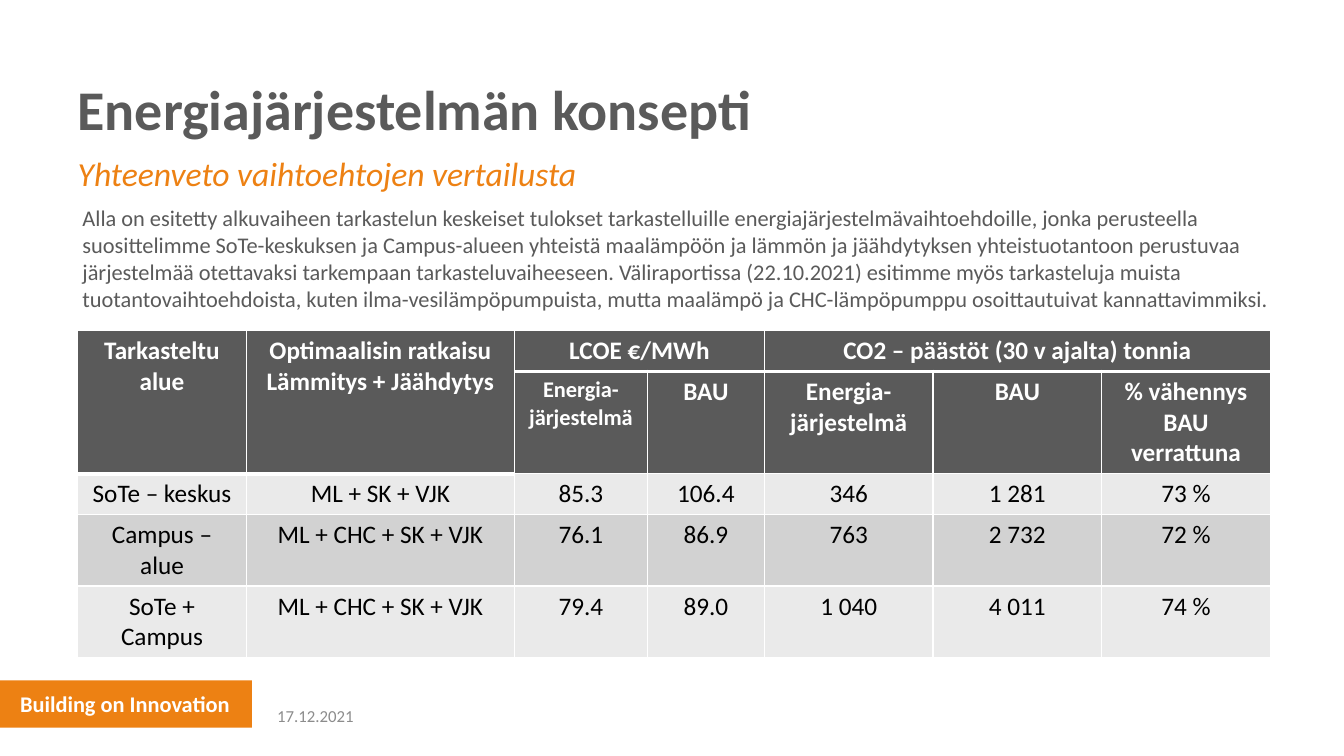
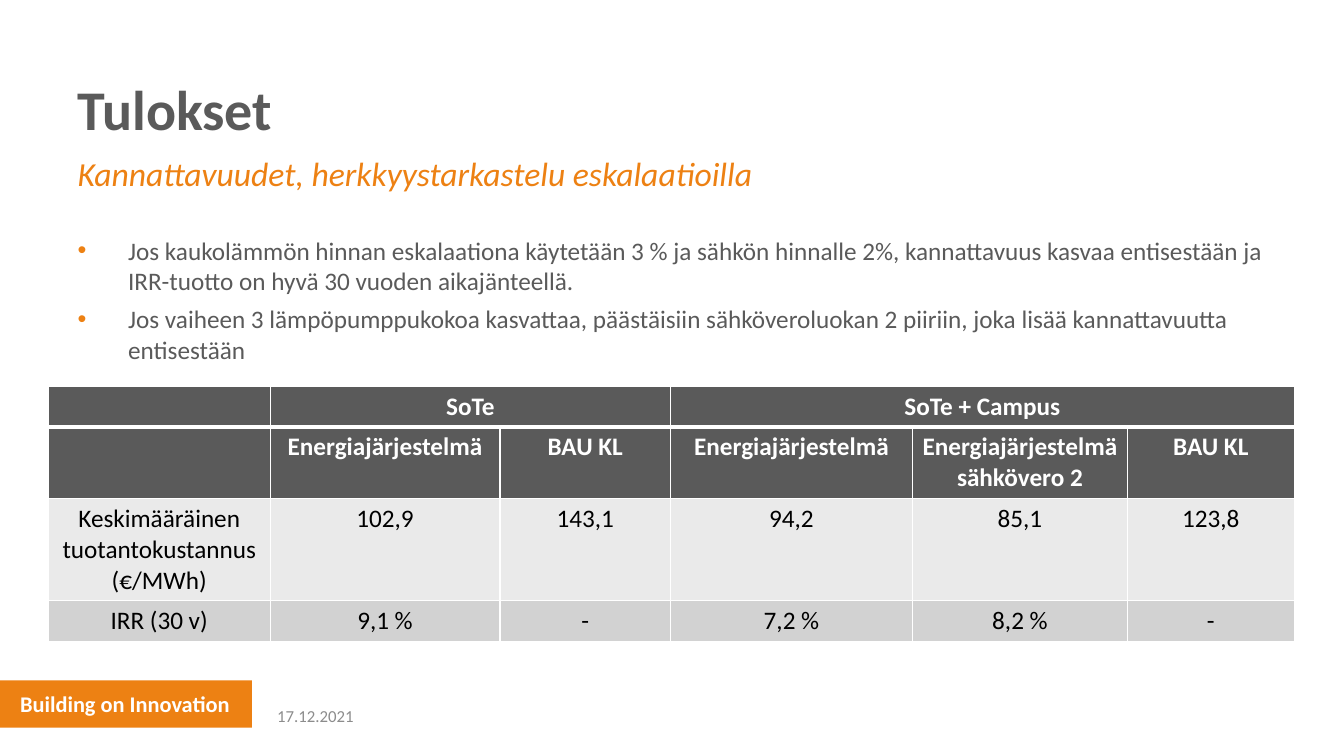
import lxml.etree
import pptx
import pptx.dml.color
import pptx.enum.shapes
import pptx.enum.text
import pptx.oxml
import pptx.oxml.ns
import pptx.util

Pt = pptx.util.Pt
qn = pptx.oxml.ns.qn
RGB = pptx.dml.color.RGBColor.from_string
ALIGN = pptx.enum.text.PP_ALIGN
ANCHOR = pptx.enum.text.MSO_ANCHOR

COLORS = {"orange": "ED8113", "dark": "5A5A5A", "grey": "8C8C8C", "white": "FFFFFF",
          "black": "000000", "light": "EAEAEA", "mid": "D2D2D2"}

# color, font attributes, text frame attributes
FLUSH = dict.fromkeys(("margin_left", "margin_top", "margin_right", "margin_bottom"), 0)
STYLES = {
    "band": ("white", {"size": Pt(16), "bold": True}, FLUSH),
    "title": ("dark", {"size": Pt(40), "bold": True}, {**FLUSH, "vertical_anchor": ANCHOR.BOTTOM}),
    "subtitle": ("orange", {"size": Pt(24), "italic": True}, FLUSH),
    "date": ("grey", {"size": Pt(12)}, {"vertical_anchor": ANCHOR.MIDDLE}),
    "body": ("dark", {"size": Pt(16)}, {}),
    "bullets": ("dark", {"size": Pt(18)}, FLUSH),
    "head": ("white", {"size": Pt(18), "bold": True}, {}),
    "subhead": ("white", {"size": Pt(16), "bold": True}, {}),
    "cell": ("black", {"size": Pt(18), "bold": False}, {}),
}

# Left, top, width, height in percent of the slide
BOXES = {
    "band": (1.5, 91.33, 16.95, 4.8),
    "title": (5.78, 7.87, 88.8, 10.93),
    "subtitle": (5.78, 20.27, 88.8, 7.47),
    "date": (19.88, 92.67, 22.5, 4.13),
    "body": (5.4, 26.4, 91.88, 15.73),
    "bullets": (5.78, 31.07, 88.88, 23.07),
}

# Row heights by number of text lines, in percent of the slide
ROW = {1: 5.4, 2: 9.47, 3: 13.53}

SLIDES = [
    {
        "texts": {
            "title": "Energiajärjestelmän konsepti",
            "subtitle": "Yhteenveto vaihtoehtojen vertailusta",
            "body": "Alla on esitetty alkuvaiheen tarkastelun keskeiset tulokset tarkastelluille "
                    "energiajärjestelmävaihtoehdoille, jonka perusteella suosittelimme "
                    "SoTe-keskuksen ja Campus-alueen yhteistä maalämpöön ja lämmön ja "
                    "jäähdytyksen yhteistuotantoon perustuvaa järjestelmää otettavaksi "
                    "tarkempaan tarkasteluvaiheeseen. Väliraportissa (22.10.2021) esitimme myös "
                    "tarkasteluja muista tuotantovaihtoehdoista, kuten "
                    "ilma-vesilämpöpumpuista, mutta maalämpö ja CHC-lämpöpumppu "
                    "osoittautuivat kannattavimmiksi.",
        },
        "at": (5.78, 43.73),
        "cols": [12.55, 19.95, 9.9, 8.7, 12.55, 12.55, 12.55],
        "lines": [1, 3, 1, 2, 2],
        "merges": [(0, 0, 1, 0), (0, 1, 1, 1), (0, 2, 0, 3), (0, 4, 0, 6)],
        "small": [(1, 2)],
        "rows": [
            ["Tarkasteltu alue", "Optimaalisin ratkaisu\nLämmitys + Jäähdytys", "LCOE €/MWh", "",
             "CO2 – päästöt (30 v ajalta) tonnia", "", ""],
            ["", "", "Energia-järjestelmä", "BAU", "Energia-järjestelmä", "BAU",
             "% vähennys BAU verrattuna"],
            ["SoTe – keskus", "ML + SK + VJK", "85.3", "106.4", "346", "1 281", "73 %"],
            ["Campus – alue", "ML + CHC + SK + VJK", "76.1", "86.9", "763", "2 732", "72 %"],
            ["SoTe + Campus", "ML + CHC + SK + VJK", "79.4", "89.0", "1 040", "4 011", "74 %"],
        ],
    },
    {
        "texts": {
            "title": "Tulokset",
            "subtitle": "Kannattavuudet, herkkyystarkastelu eskalaatioilla",
            "bullets": "Jos kaukolämmön hinnan eskalaationa käytetään 3 % ja sähkön hinnalle 2%, "
                       "kannattavuus kasvaa entisestään ja IRR-tuotto on hyvä 30 vuoden "
                       "aikajänteellä.\n"
                       "Jos vaiheen 3 lämpöpumppukokoa kasvattaa, päästäisiin sähköveroluokan 2 "
                       "piiriin, joka lisää kannattavuutta entisestään",
        },
        "at": (3.6, 51.07),
        "cols": [16.5, 17.1, 12.7, 18, 16, 12.4],
        "lines": [1, 2, 3, 1],
        "merges": [(0, 1, 0, 2), (0, 3, 0, 5)],
        "small": [],
        "rows": [
            ["", "SoTe", "", "SoTe + Campus", "", ""],
            ["", "Energiajärjestelmä", "BAU KL", "Energiajärjestelmä",
             "Energiajärjestelmäsähkövero 2", "BAU KL"],
            ["Keskimääräinen tuotantokustannus\n(€/MWh)", "102,9", "143,1", "94,2", "85,1",
             "123,8"],
            ["IRR (30 v)", "9,1 %", "-", "7,2 %", "8,2 %", "-"],
        ],
    },
]

prs = pptx.Presentation()
prs.slide_width = pptx.util.Inches(13.33)
prs.slide_height = pptx.util.Inches(7.5)


def share(*percents):
    """Turn percents, alternately across and down, into slide lengths."""
    sizes = (prs.slide_width, prs.slide_height)
    return [int(sizes[i % 2] * v / 100) for i, v in enumerate(percents)]


def write(tf, text, style, align=ALIGN.LEFT):
    """Put one paragraph per line of text into a text frame."""
    color, font, frame = STYLES[style]
    tf.word_wrap = True
    for name, value in frame.items():
        setattr(tf, name, value)
    for i, line in enumerate(text.split("\n")):
        p = tf.add_paragraph() if i else tf.paragraphs[0]
        p.alignment = align
        if style == "bullets":
            if i:
                p.space_before = Pt(6)
            pPr = p._p.get_or_add_pPr()
            pPr.set("marL", str(pptx.util.Inches(0.5)))
            pPr.set("indent", str(-pptx.util.Inches(0.5)))
            clr = lxml.etree.SubElement(pPr, qn("a:buClr"))
            lxml.etree.SubElement(clr, qn("a:srgbClr"), val=COLORS["orange"])
            lxml.etree.SubElement(pPr, qn("a:buFont"), typeface="Arial")
            lxml.etree.SubElement(pPr, qn("a:buChar"), char="•")
        r = p.add_run()
        r.text = line
        r.font.color.rgb = RGB(COLORS[color])
        for name, value in {"name": "Calibri", **font}.items():
            setattr(r.font, name, value)


for spec_slide in SLIDES:
    s = prs.slides.add_slide(prs.slide_layouts[6])

    band = s.shapes.add_shape(pptx.enum.shapes.MSO_SHAPE.RECTANGLE, *share(0, 90, 18.75, 6.27))
    band.shadow.inherit = False
    band.fill.solid()
    band.fill.fore_color.rgb = RGB(COLORS["orange"])
    band.line.fill.background()

    texts = {"band": "Building on Innovation", **spec_slide["texts"], "date": "17.12.2021"}
    for style, text in texts.items():
        sp = s.shapes.add_textbox(*share(*BOXES[style]))
        write(sp.text_frame, text, style)

    cols, rows = spec_slide["cols"], spec_slide["rows"]
    heights = [ROW[n] for n in spec_slide["lines"]]
    frame = s.shapes.add_table(len(rows), len(cols),
                               *share(*spec_slide["at"], sum(cols), sum(heights)))
    table = frame.table
    table.first_row = table.horz_banding = False
    for column, width in zip(table.columns, cols):
        column.width = share(width)[0]
    for row, height in zip(table.rows, heights):
        row.height = share(0, height)[1]

    for i, row in enumerate(rows):
        fill = "dark" if i < 2 else ("light", "mid")[i % 2]
        for j, text in enumerate(row):
            cell = table.cell(i, j)
            tcPr = cell._tc.get_or_add_tcPr()
            for side in "LRTB":
                thick = (i, side) in ((0, "B"), (1, "T"))
                ln = lxml.etree.SubElement(tcPr, qn(f"a:ln{side}"), w=str(Pt(3 if thick else 1)))
                solid = lxml.etree.SubElement(ln, qn("a:solidFill"))
                lxml.etree.SubElement(solid, qn("a:srgbClr"), val=COLORS["white"])
            cell.fill.solid()
            cell.fill.fore_color.rgb = RGB(COLORS[fill])
            if text:
                style = "subhead" if (i, j) in spec_slide["small"] else "head" if i < 2 else "cell"
                write(cell.text_frame, text, style, ALIGN.CENTER)
    for top, left, bottom, right in spec_slide["merges"]:
        table.cell(top, left).merge(table.cell(bottom, right))

prs.save("out.pptx")
